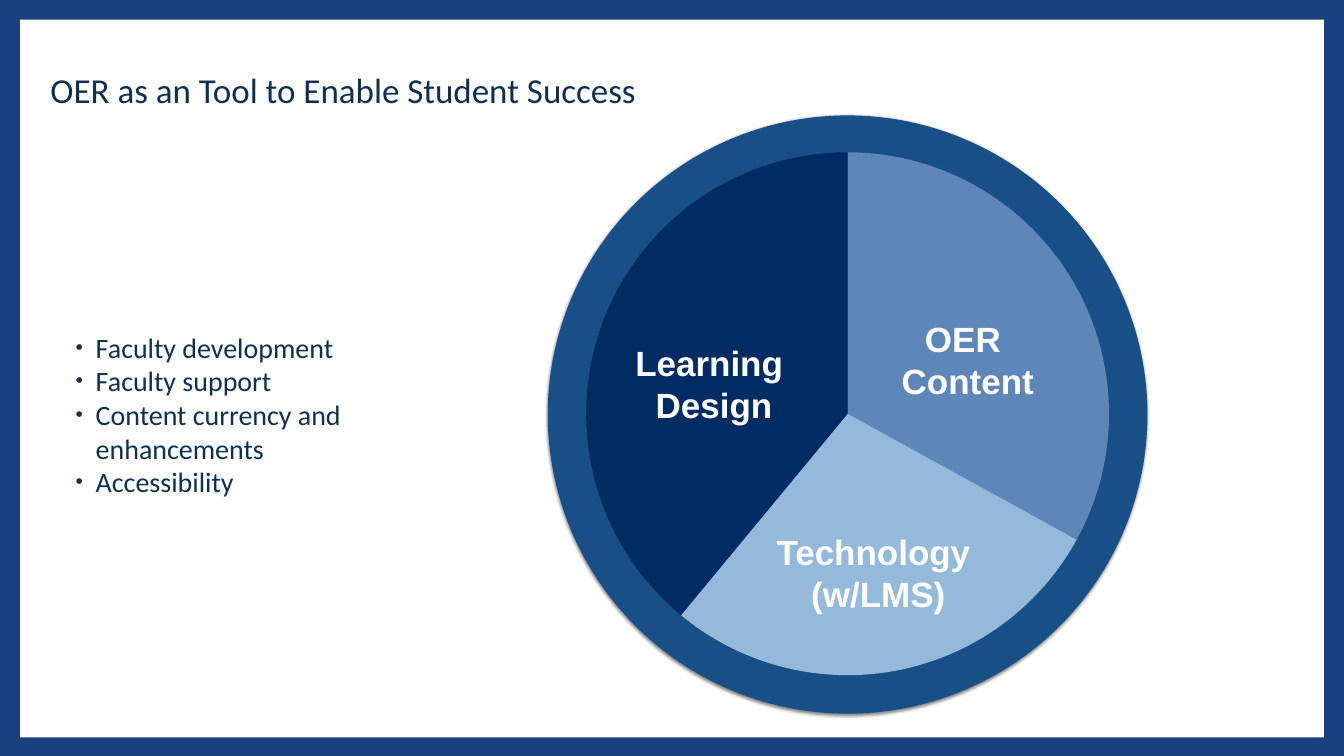
from lxml import etree
from pptx import Presentation
from pptx.chart.data import CategoryChartData
from pptx.dml.color import RGBColor
from pptx.enum.chart import XL_CHART_TYPE
from pptx.enum.shapes import MSO_SHAPE
from pptx.enum.text import MSO_ANCHOR, PP_ALIGN
from pptx.oxml import parse_xml
from pptx.oxml.ns import nsdecls, qn
from pptx.util import Inches, Pt

RECT, OVAL = MSO_SHAPE.RECTANGLE, MSO_SHAPE.OVAL
PIE = XL_CHART_TYPE.PIE
LEFT, CENTER = PP_ALIGN.LEFT, PP_ALIGN.CENTER
MIDDLE = MSO_ANCHOR.MIDDLE

BLUE, RING, NAVY, WHITE = "1B4080", "174F86", "103053", "FFFFFF"


def rgb(value):
    return RGBColor.from_string(value)


def box(left, top, width, height):
    return [Inches(v) for v in (left, top, width, height)]


class SlideBuilder:
    inset = Inches(0.06)
    indent = Inches(0.4)

    def __init__(self, slide):
        self.slide = slide

    def shape(self, kind, place, color):
        item = self.slide.shapes.add_shape(kind, *box(*place))
        item.shadow.inherit = False
        item.fill.solid()
        item.fill.fore_color.rgb = rgb(color)
        item.line.fill.background()
        return item

    def soft_shadow(self, item):
        effects = item._element.spPr.find(qn("a:effectLst"))
        effects.append(parse_xml(
            f'<a:outerShdw {nsdecls("a")} blurRad="{Pt(3)}" dist="{Pt(2)}" '
            'dir="5400000" rotWithShape="0"><a:srgbClr val="000000">'
            '<a:alpha val="50000"/></a:srgbClr></a:outerShdw>'))

    def text(self, place, lines, size, color, font="Calibri", bold=False,
             align=LEFT, wrap=False, bullets=False):
        frame = self.slide.shapes.add_textbox(*box(*place)).text_frame
        settings = {"word_wrap": wrap, "vertical_anchor": MIDDLE}
        for side in ("left", "top", "right", "bottom"):
            settings[f"margin_{side}"] = self.inset
        for name, value in settings.items():
            setattr(frame, name, value)
        for i, line in enumerate(lines):
            paragraph = frame.add_paragraph() if i else frame.paragraphs[0]
            paragraph.alignment = align
            run = paragraph.add_run()
            run.text = line
            for name, value in {"name": font, "size": Pt(size), "bold": bold}.items():
                setattr(run.font, name, value)
            run.font.color.rgb = rgb(color)
            if bullets:
                self.bullet(paragraph)

    def bullet(self, paragraph):
        props = paragraph._p.get_or_add_pPr()
        props.set("marL", str(self.indent))
        props.set("indent", str(-self.indent))
        for tag, name, value in (("a:buSzPct", "val", "75000"),
                                 ("a:buFont", "typeface", "Arial"),
                                 ("a:buChar", "char", "•")):
            etree.SubElement(props, qn(tag)).set(name, value)

    def pie(self, place, values, colors):
        data = CategoryChartData()
        data.categories = [str(i + 1) for i in range(len(values))]
        data.add_series("Series 1", values)
        chart = self.slide.shapes.add_chart(PIE, *box(*place), data).chart
        chart.has_legend = chart.has_title = False
        chart.font.name, chart.font.size = "Arial", Pt(10)
        chart.font.color.rgb = rgb("000000")
        plot = chart.plots[0]
        plot.vary_by_categories = False
        for i, color in enumerate(colors):
            part = plot.series[0].points[i].format
            part.fill.solid()
            part.fill.fore_color.rgb = rgb(color)
            part.line.fill.background()
        # Let the pie fill its frame
        area = chart._chartSpace.chart.plotArea
        for old in area.findall(qn("c:layout")):
            area.remove(old)
        layout = etree.Element(qn("c:layout"))
        manual = etree.SubElement(layout, qn("c:manualLayout"))
        for tag, value in (("layoutTarget", "inner"), ("xMode", "edge"), ("yMode", "edge"),
                           ("x", "0.005"), ("y", "0.005"), ("w", "0.99"), ("h", "0.99")):
            etree.SubElement(manual, qn(f"c:{tag}")).set("val", value)
        area.insert(0, layout)


def main():
    deck = Presentation()
    deck.slide_width, deck.slide_height = Inches(26.67), Inches(15)
    build = SlideBuilder(deck.slides.add_slide(deck.slide_layouts[6]))

    # Frame and title
    build.shape(RECT, (-0.04, -0.01, 26.74, 15.02), BLUE)
    build.shape(RECT, (0.4, 0.39, 25.87, 14.24), WHITE)
    build.text((0.94, 1.31, 12.96, 0.92),
               ["OER as an Tool to Enable Student Success"], 50, NAVY)

    # Ring and pie
    ring = build.shape(OVAL, (10.87, 2.29, 11.9, 11.87), RING)
    build.soft_shadow(ring)
    build.pie((11.58, 2.97, 10.48, 10.48), (33, 28, 39), ("5E86B8", "94B9DA", "002C64"))

    # Sector labels; the trailing space shifts each first line
    for place, lines in (((12.45, 6.72, 3.44, 1.78), ("Learning ", "Design")),
                         ((17.83, 6.25, 2.75, 1.78), ("OER ", "Content")),
                         ((15.25, 10.46, 4.36, 1.78), ("Technology ", "(w/LMS)"))):
        build.text(place, lines, 50, WHITE, font="Arial", bold=True, align=CENTER)

    # Supporting points
    build.text((1.44, 6.5, 8.35, 3.44),
               ["Faculty development", "Faculty support",
                "Content currency and enhancements", "Accessibility"],
               40, NAVY, wrap=True, bullets=True)

    deck.save("out.pptx")


if __name__ == "__main__":
    main()
